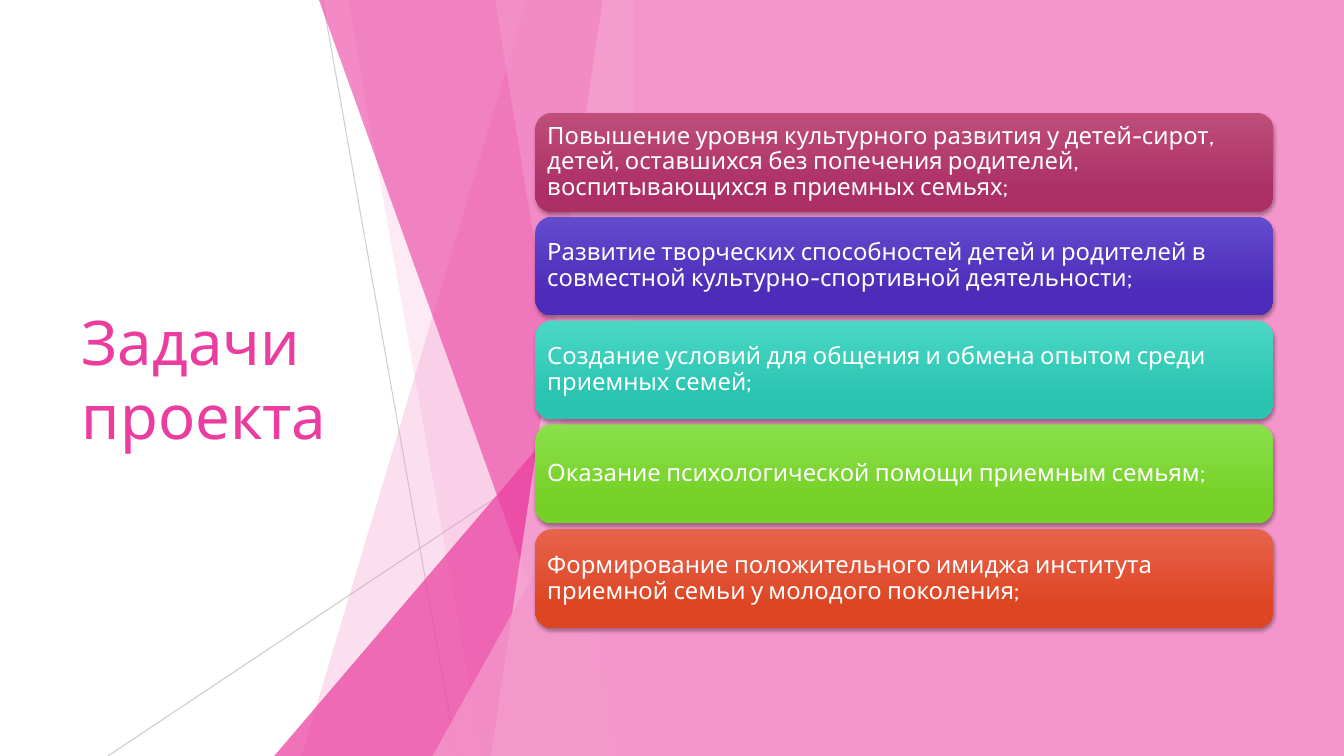
from pptx import Presentation
from pptx.dml.color import RGBColor
from pptx.enum.shapes import MSO_CONNECTOR, MSO_SHAPE
from pptx.enum.text import MSO_ANCHOR, MSO_AUTO_SIZE, PP_ALIGN
from pptx.oxml.ns import qn
from pptx.util import Pt
from lxml.etree import SubElement

PX = 9144
WIDE, HIGH = 1333, 750
EDGE = 628
HUES = {
    "pink": "F496CB", "rose": "EB3D9F", "pale": "F8C0E0",
    "gray": "BFBFBF", "white": "FFFFFF", "black": "000000",
}


def paint(part, hue, clear=100):
    part.shadow.inherit = False
    part.fill.solid()
    part.fill.fore_color.rgb = RGBColor.from_string(HUES[hue])
    part.line.fill.background()
    if clear < 100:
        tint = part.element.spPr.find(".//" + qn("a:srgbClr"))
        SubElement(tint, qn("a:alpha"), val=str(clear * 1000))


def write(part, text, size, hue, frame, para):
    box = part.text_frame
    box.text = text
    for key, val in frame.items():
        setattr(box, key, val)
    line = box.paragraphs[0]
    for key, val in para.items():
        setattr(line, key, val)
    font = line.runs[0].font
    for key, val in {"name": "Cabin", "size": Pt(size), "bold": False}.items():
        setattr(font, key, val)
    font.color.rgb = RGBColor.from_string(HUES[hue])


deck = Presentation()
deck.slide_width, deck.slide_height = WIDE * PX, HIGH * PX
slide = deck.slides.add_slide(deck.slide_layouts[5])
shapes = slide.shapes

frame = {
    "word_wrap": True,
    "auto_size": MSO_AUTO_SIZE.NONE,
    "vertical_anchor": MSO_ANCHOR.MIDDLE,
}
title = shapes.title
place = {"left": 71, "top": 151, "width": 388, "height": 448}
for key, val in place.items():
    setattr(title, key, val * PX)
write(title, "Задачи проекта", 44, "rose", frame, {"alignment": PP_ALIGN.LEFT})

rays = [(320, 0, 453, HIGH, 75), (EDGE, 403, 107, HIGH, 80)]
for *ends, clear in rays:
    ray = shapes.add_connector(MSO_CONNECTOR.STRAIGHT, *[n * PX for n in ends])
    ray.line.width = Pt(0.75)
    ray.line.color.rgb = RGBColor.from_string(HUES["gray"])
    tint = ray.element.spPr.find(".//" + qn("a:srgbClr"))
    SubElement(tint, qn("a:alpha"), val=str(clear * 1000))
    SubElement(ray.element.spPr, qn("a:effectLst"))

facets = [
    ("band", 523, 299, "pink", 30),
    ("band", 345, 478, "pink", 20),
    ("wedge", 272, 333, "rose", 72),
    ("band", 316, 586, "rose", 60),
    ("band", 598, 487, "pale", 70),
    ("band", 491, 613, "pink", 65),
    ("wedge", 429, 393, "pink", 80),
]
for kind, one, two, hue, clear in facets:
    if kind == "band":
        draft = shapes.build_freeform(one, -1, PX)
        draft.add_line_segments([(EDGE, -1), (EDGE, HIGH), (two, HIGH)])
        facet = draft.convert_to_shape()
    else:
        box = one, two, EDGE - one, HIGH - two
        facet = shapes.add_shape(MSO_SHAPE.ISOSCELES_TRIANGLE, *[n * PX for n in box])
        facet.adjustments[0] = 1
    paint(facet, hue, clear)

box = EDGE, 0, WIDE - EDGE, HIGH
panel = shapes.add_shape(MSO_SHAPE.RECTANGLE, *[n * PX for n in box])
paint(panel, "pink")

goals = [
    ("Повышение уровня культурного развития у детей-сирот, детей, оставшихся без попечения родителей, воспитывающихся в приемных семьях;", "BF4E79", "AC3066"),
    ("Развитие творческих способностей детей и родителей в совместной культурно-спортивной деятельности;", "634BCD", "4C2CB9"),
    ("Создание условий для общения и обмена опытом среди приемных семей;", "4AD8C5", "2AC4B1"),
    ("Оказание психологической помощи приемным семьям;", "89E04B", "76D026"),
    ("Формирование положительного имиджа института приемной семьи у молодого поколения;", "E7634C", "DE4522"),
]
sides = ("margin_left", "margin_top", "margin_right", "margin_bottom")
inset = frame | {side: 7 * PX for side in sides}
para = {"alignment": PP_ALIGN.LEFT, "line_spacing": 0.9}
for row, (text, *tones) in enumerate(goals):
    box = 531, 112 + row * 413 // 4, 732, 98
    card = shapes.add_shape(MSO_SHAPE.ROUNDED_RECTANGLE, *[n * PX for n in box])
    paint(card, "white")
    card.fill.gradient()
    card.fill.gradient_angle = 270
    for stop, tone, spot in zip(card.fill.gradient_stops, tones, (0, 0.78)):
        stop.color.rgb = RGBColor.from_string(tone)
        stop.position = spot
    glow = card.element.spPr.find(qn("a:effectLst"))
    shade = SubElement(glow, qn("a:outerShdw"), blurRad=str(Pt(3)),
                       dist=str(Pt(2)), dir="5400000", rotWithShape="0")
    tint = SubElement(shade, qn("a:srgbClr"), val=HUES["black"])
    SubElement(tint, qn("a:alpha"), val="35000")
    write(card, text, 17, "white", inset, para)

deck.save("out.pptx")
